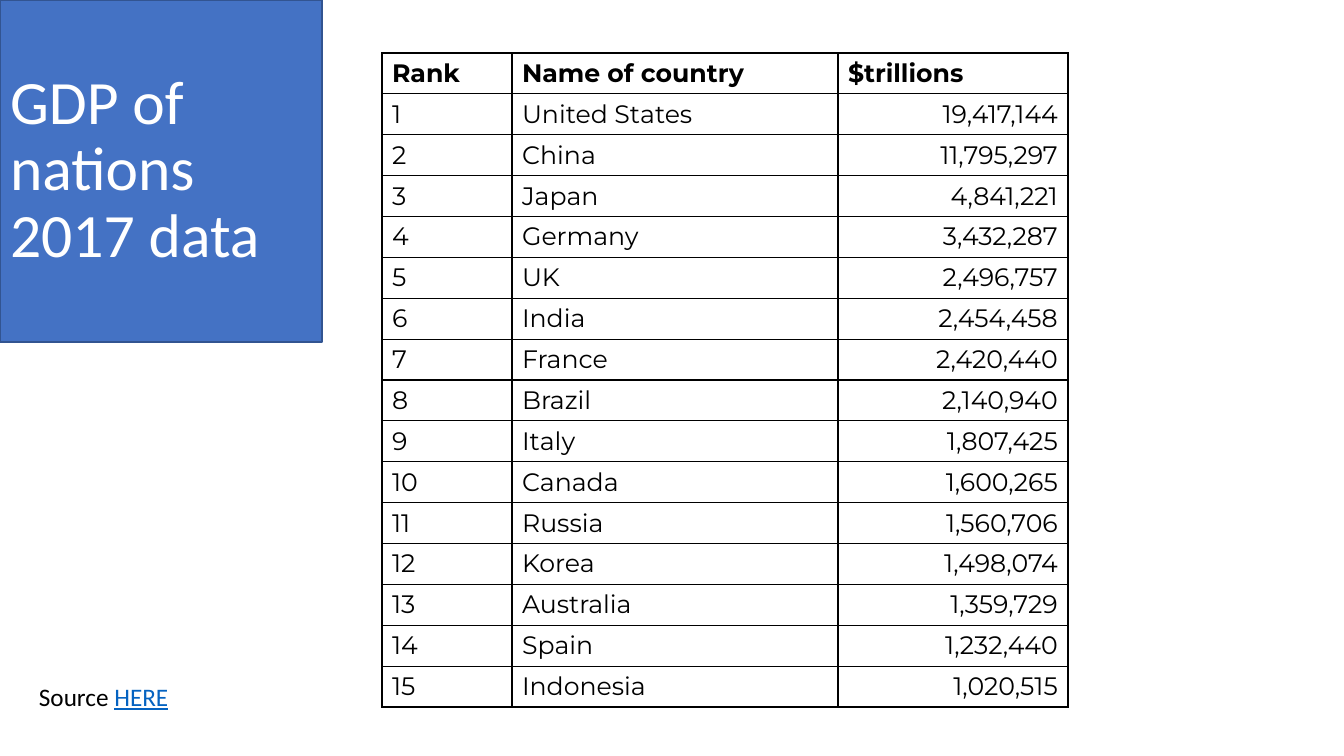
from lxml import etree
from pptx import Presentation
from pptx import util as u
from pptx.dml.color import RGBColor
from pptx.enum import text
from pptx.oxml.ns import qn

TITLE = ("GDP of nations", "2017 data")
SOURCE = ("Source ", "HERE")
HEADER = ("Rank", "Name of country", "$trillions")
COUNTRIES = [
    ("United States", "19,417,144"),
    ("China", "11,795,297"),
    ("Japan", "4,841,221"),
    ("Germany", "3,432,287"),
    ("UK", "2,496,757"),
    ("India", "2,454,458"),
    ("France", "2,420,440"),
    ("Brazil", "2,140,940"),
    ("Italy", "1,807,425"),
    ("Canada", "1,600,265"),
    ("Russia", "1,560,706"),
    ("Korea", "1,498,074"),
    ("Australia", "1,359,729"),
    ("Spain", "1,232,440"),
    ("Indonesia", "1,020,515"),
]

SLIDE_SIZE = (1344, 756)
TITLE_BOX = (0, 0, 322, 342)
TABLE_LEFT, TABLE_TOP, TABLE_HEIGHT = 382, 53, 654
COLUMN_WIDTHS = (130, 326, 230)
SOURCE_BOX = (29, 676, 151, 40)

BLUE = RGBColor(0x44, 0x72, 0xC4)
DARK_BLUE = RGBColor(0x32, 0x54, 0x91)
LINK_BLUE = RGBColor(0x05, 0x63, 0xC1)
WHITE = RGBColor(0xFF, 0xFF, 0xFF)
BLACK = RGBColor(0, 0, 0)


def px(length):
    return u.Emu(round(length * 914400 / 100.8))


def add_text(paragraph, content, size=18, font="Calibri", color=BLACK,
             bold=False, underline=False, align=text.PP_ALIGN.LEFT):
    paragraph.alignment = align
    run = paragraph.add_run()
    run.text = content
    run.font.size = u.Pt(size)
    run.font.name = font
    run.font.color.rgb = color
    run.font.bold = bold
    run.font.underline = underline


def add_borders(cell):
    properties = cell._tc.get_or_add_tcPr()
    for position, side in enumerate(("a:lnL", "a:lnR", "a:lnT", "a:lnB")):
        line = etree.Element(qn(side), w=str(u.Pt(1)))
        fill = etree.SubElement(line, qn("a:solidFill"))
        etree.SubElement(fill, qn("a:srgbClr"), val=str(BLACK))
        properties.insert(position, line)


def build_title(slide):
    title = slide.shapes.title
    title.left, title.top, title.width, title.height = map(px, TITLE_BOX)
    title.fill.solid()
    title.fill.fore_color.rgb = BLUE
    title.line.color.rgb = DARK_BLUE
    title.line.width = u.Pt(1)
    frame = title.text_frame
    frame.word_wrap = True
    frame.auto_size = text.MSO_AUTO_SIZE.NONE
    frame.vertical_anchor = text.MSO_ANCHOR.MIDDLE
    paragraph = frame.paragraphs[0]
    paragraph.line_spacing = 0.9
    for index, line in enumerate(TITLE):
        if index:
            paragraph.add_line_break()
        add_text(paragraph, line, size=44, color=WHITE)


def build_table(slide):
    rows = [HEADER] + [(str(rank), *country)
                       for rank, country in enumerate(COUNTRIES, 1)]
    table = slide.shapes.add_table(
        len(rows), len(HEADER), px(TABLE_LEFT), px(TABLE_TOP),
        px(sum(COLUMN_WIDTHS)), px(TABLE_HEIGHT)).table
    for column, width in zip(table.columns, COLUMN_WIDTHS):
        column.width = px(width)
    for row_index, values in enumerate(rows):
        table.rows[row_index].height = px(TABLE_HEIGHT / len(rows))
        is_header = row_index == 0
        for column_index, value in enumerate(values):
            cell = table.cell(row_index, column_index)
            cell.fill.solid()
            cell.fill.fore_color.rgb = WHITE
            add_borders(cell)
            is_amount = column_index == 2 and not is_header
            add_text(cell.text_frame.paragraphs[0], value, font="Montserrat",
                     bold=is_header,
                     align=text.PP_ALIGN.RIGHT if is_amount else text.PP_ALIGN.LEFT)


def build_source(slide):
    frame = slide.shapes.add_textbox(*map(px, SOURCE_BOX)).text_frame
    frame.word_wrap = False
    frame.auto_size = text.MSO_AUTO_SIZE.SHAPE_TO_FIT_TEXT
    paragraph = frame.paragraphs[0]
    label, link = SOURCE
    add_text(paragraph, label)
    add_text(paragraph, link, color=LINK_BLUE, underline=True)


def main():
    presentation = Presentation()
    presentation.slide_width, presentation.slide_height = map(px, SLIDE_SIZE)
    slide = presentation.slides.add_slide(presentation.slide_layouts[5])
    build_title(slide)
    build_table(slide)
    build_source(slide)
    presentation.save("out.pptx")


if __name__ == "__main__":
    main()
